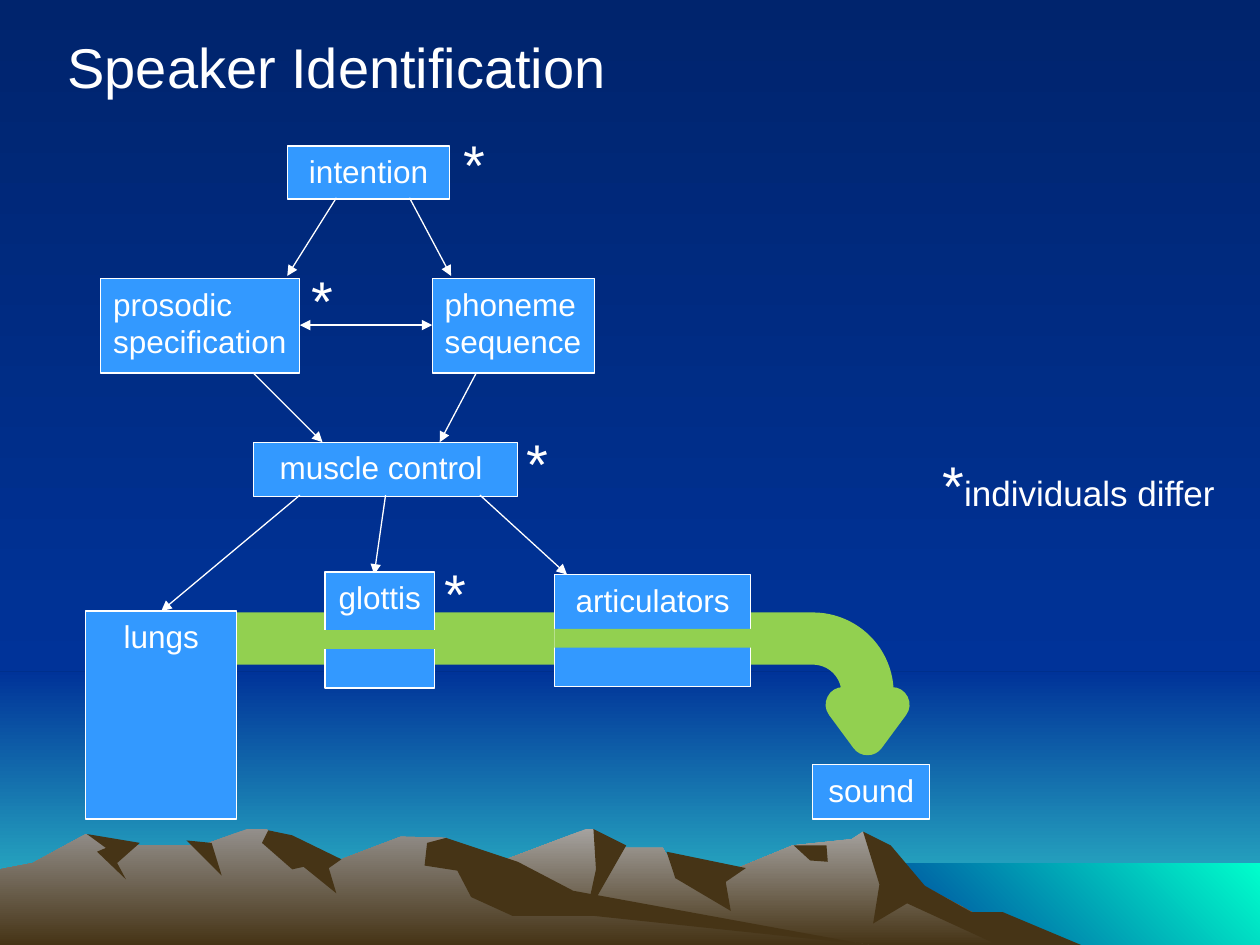
from pptx import Presentation
from pptx.dml.color import RGBColor
from pptx.enum.shapes import MSO_CONNECTOR, MSO_SHAPE
from pptx.enum.text import MSO_ANCHOR, PP_ALIGN
from pptx.oxml.ns import qn
from pptx.util import Inches, Pt
from lxml import etree

RECT, UTURN = MSO_SHAPE.RECTANGLE, MSO_SHAPE.U_TURN_ARROW
STRAIGHT = MSO_CONNECTOR.STRAIGHT
LEFT, CENTER = PP_ALIGN.LEFT, PP_ALIGN.CENTER
TOP = MSO_ANCHOR.TOP

THEME = {
    "font": "Arial", "title": 32, "body": 18, "note": 20, "line": 0.75, "airflow": 20,
    "white": "FFFFFF", "box": "3399FF", "air": "92D050", "rock": "463416",
    "sky": ("00246D", "003399"), "horizon": ("003399", "33CCCC"),
    "sea": ("003399", "00FFCC"), "near": ("A5A29F", "463416"), "far": ("938F8B", "463416"),
}
DOWN, UP_RIGHT = 270, 45
WIDTH, HEIGHT, HORIZON = 10, 7.5, 5.33

BACKDROP = [
    ("horizon", DOWN, (0, HORIZON, WIDTH, HEIGHT - HORIZON)),
    ("sky", DOWN, (0, 0, WIDTH, HORIZON)),
    ("sea", UP_RIGHT, (6.83, 6.85, 3.17, 0.67)),
]

RIDGES = [
    ("near", [(8.2, HEIGHT), (7.23, 6.98), (6.85, 6.6), (6.76, 6.66), (6.29, 6.71),
              (5.66, 6.97), (5.36, 6.9), (5.26, 6.73), (4.86, 6.73), (4.71, 6.58),
              (4.65, 6.58), (3.94, 6.85), (3.27, 7.09), (2.58, HEIGHT)]),
    ("rock", [(8.58, HEIGHT), (7.96, 7.24), (7.71, 7.24), (7.34, 7.03), (7.07, 6.71),
              (6.85, 6.6), (6.98, 7.02), (6.93, 7.33), (7.2, 7.17), (7.92, HEIGHT)]),
    ("rock", [(4.71, 6.58), (4.73, 6.9), (4.65, 7.27), (4.97, 6.71)]),
    ("rock", [(5.29, 6.76), (5.36, 6.97), (5.8, 7.23), (5.76, 7), (5.92, 6.89)]),
    ("rock", [(6.3, 6.71), (6.43, 6.83), (6.57, 6.84), (6.56, 6.71)]),
    ("far", [(6.9, HEIGHT), (4.32, 7.12), (3.54, 6.65), (3.18, 6.64), (2.71, 6.82),
             (2.36, 6.81), (2.12, 6.58), (1.96, 6.58), (1.6, 6.71), (0.94, 6.71),
             (0.68, 6.62), (0.26, 6.85), (0, 6.9), (0, HEIGHT)]),
    ("rock", [(2.13, 6.59), (2.08, 6.69), (2.32, 6.9), (2.41, 6.88), (2.67, 7.09),
              (2.61, 6.89), (2.71, 6.82), (2.32, 6.63)]),
    ("rock", [(3.54, 6.65), (3.39, 6.69), (3.37, 6.87), (3.63, 6.91), (3.74, 7.12),
              (4.07, 7.27), (4.72, 7.27), (6.9, HEIGHT), (4.55, 7.07), (4.11, 6.84)]),
    ("rock", [(1.48, 6.67), (1.76, 6.95), (1.68, 6.69)]),
    ("rock", [(0.69, 6.62), (0.84, 6.73), (0.77, 6.76), (1, 6.98), (0.93, 6.85), (1.11, 6.69)]),
]

STAGES = {
    "intention": (2.28, 1.16, 1.29, 0.42),
    "phoneme sequence": (3.43, 2.21, 1.29, 0.75),
    "prosodic specification": (0.8, 2.21, 1.58, 0.75),
    "sound ": (6.45, 6.07, 0.93, 0.43),
    "muscle control ": (2.01, 3.51, 2.1, 0.43),
}
ORGANS = {
    "lungs": (0.68, 4.85, 1.2, 1.65),
    "glottis": (2.58, 4.54, 0.87, 0.92),
    "articulators": (4.4, 4.56, 1.56, 0.89),
}
LEFT_ALIGNED = ("phoneme sequence", "prosodic specification")
AIRFLOW = (1.32, 5, 5.76, 1.14)
AIRFLOW_ADJ = (0.12, 0.17, 0.23, 0.44, 0.75)
CHANNELS = [(2.41, 5, 1.2, 0.15), (4.4, 4.99, 1.78, 0.15)]

LEVELS = [
    (1.57, 2.19, [(2.67, 2.28), (3.25, 3.58)]),
    (2.96, 3.51, [(2.01, 2.56), (3.78, 3.49)]),
    (3.93, 4.56, [(3.06, 2.97), (3.81, 4.5)]),
    (3.93, 4.85, [(2.38, 1.28)]),
]
EXCHANGE = (3.43, 2.58, 2.38, 2.58)

STAR = ("*", "title")
STAR_SPOTS = [(2.37, 2.06), (3.58, 0.98), (4.08, 3.35), (3.43, 4.38)]
LABELS = [
    ([("Speaker Identification ", "title")], CENTER, True, (0.4, 0.21, 4.55, 0.64)),
    *[([STAR], LEFT, True, (x, y, 1.01, 0.64)) for x, y in STAR_SPOTS],
    ([STAR, ("individuals differ", "note")], LEFT, False, (7.38, 3.53, 2.46, 0.64)),
]


def rgb(name):
    return RGBColor.from_string(THEME[name])


def paint(fill, name, angle=DOWN):
    if isinstance(THEME[name], str):
        fill.solid()
        fill.fore_color.rgb = rgb(name)
        return
    fill.gradient()
    fill.gradient_angle = angle
    for stop, color in zip(fill.gradient_stops, THEME[name]):
        stop.color.rgb = RGBColor.from_string(color)


def outline(sp, name, width):
    sp.line.color.rgb = rgb(name)
    sp.line.width = Pt(width)


def finish(sp, fill, angle=DOWN):
    sp.shadow.inherit = False
    sp.line.fill.background()
    paint(sp.fill, fill, angle)
    return sp


def add_block(shapes, box, fill, angle=DOWN):
    return finish(shapes.add_shape(RECT, *map(Inches, box)), fill, angle)


def add_ridge(shapes, fill, points):
    start, *rest = [tuple(map(Inches, point)) for point in points]
    builder = shapes.build_freeform(*start)
    builder.add_line_segments(rest, close=True)
    finish(builder.convert_to_shape(), fill)


def write(sp, runs, align, wrap=True):
    tf = sp.text_frame
    tf.word_wrap = wrap
    tf.vertical_anchor = TOP
    p = tf.paragraphs[0]
    p.alignment = align
    for text, size in runs:
        r = p.add_run()
        r.text = text
        r.font.name = THEME["font"]
        r.font.size = Pt(THEME[size])
        r.font.color.rgb = rgb("white")


def add_stages(shapes, stages):
    for text, box in stages.items():
        sp = add_block(shapes, box, "box")
        outline(sp, "white", THEME["line"])
        write(sp, [(text, "body")], LEFT if text in LEFT_ALIGNED else CENTER)


def add_arrow(shapes, ends, heads=("tailEnd",)):
    line = shapes.add_connector(STRAIGHT, *map(Inches, ends))
    outline(line, "white", THEME["line"])
    for head in heads:
        etree.SubElement(line.line._get_or_add_ln(), qn(f"a:{head}"), type="triangle")
    etree.SubElement(line._element.spPr, qn("a:effectLst"))


def add_airflow(shapes):
    sp = shapes.add_shape(UTURN, *map(Inches, AIRFLOW))
    sp.shadow.inherit = False
    for i, value in enumerate(AIRFLOW_ADJ):
        sp.adjustments[i] = value
    sp.fill.background()
    outline(sp, "air", THEME["airflow"])
    etree.SubElement(sp.line._get_or_add_ln(), qn("a:round"))


def main():
    prs = Presentation()
    prs.slide_width, prs.slide_height = Inches(WIDTH), Inches(HEIGHT)
    s = prs.slides.add_slide(prs.slide_layouts[6])
    paint(s.background.fill, "sky")
    for fill, angle, box in BACKDROP:
        add_block(s.shapes, box, fill, angle)
    for fill, points in RIDGES:
        add_ridge(s.shapes, fill, points)
    add_stages(s.shapes, STAGES)
    for top, bottom, spans in LEVELS:
        for x1, x2 in spans:
            add_arrow(s.shapes, (x1, top, x2, bottom))
    add_airflow(s.shapes)
    add_stages(s.shapes, ORGANS)
    for box in CHANNELS:
        add_block(s.shapes, box, "air")
    add_arrow(s.shapes, EXCHANGE, ("headEnd", "tailEnd"))
    for runs, align, wrap, box in LABELS:
        write(s.shapes.add_textbox(*map(Inches, box)), runs, align, wrap)
    prs.save("out.pptx")


if __name__ == "__main__":
    main()
